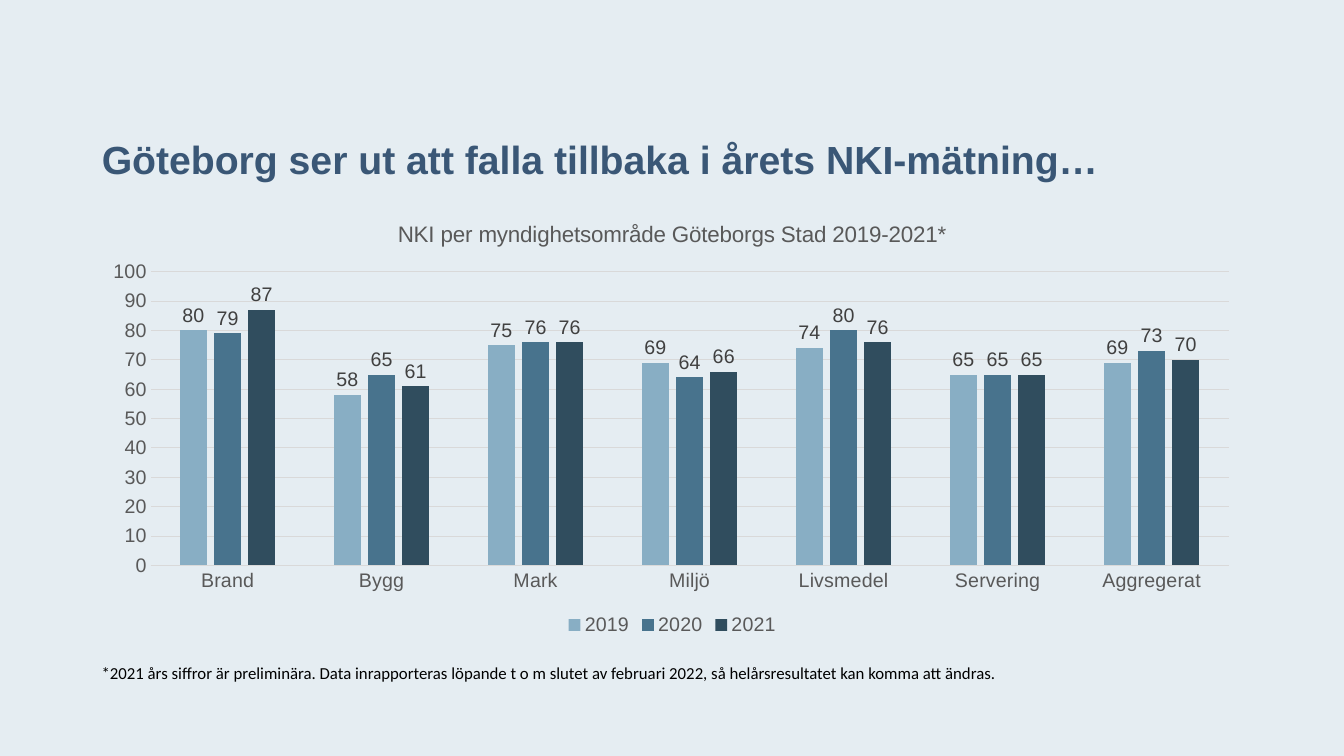
from dataclasses import dataclass

import pptx
import pptx.chart.data
import pptx.dml.color
import pptx.enum.chart
import pptx.enum.text
import pptx.oxml
import pptx.oxml.ns
import pptx.util
from pptx.util import Pt


@dataclass(frozen=True)
class Theme:
    background: str = "E5EDF2"
    heading: str = "3A5776"
    note: str = "000000"
    chart_text: str = "595959"
    value_text: str = "404040"
    grid: str = "D9D9D9"
    chart_font: str = "Arial"
    note_font: str = "Calibri"
    heading_size: float = 28
    chart_title_size: float = 16
    chart_size: float = 14
    note_size: float = 12


@dataclass(frozen=True)
class Box:
    left: float
    top: float
    width: float
    height: float

    def lengths(self) -> tuple:
        return Pt(self.left), Pt(self.top), Pt(self.width), Pt(self.height)


@dataclass(frozen=True)
class YearSeries:
    year: str
    scores: tuple
    color: str


THEME = Theme()
TITLE_BOX = Box(65.5, 29.5, 828, 104.5)
CHART_BOX = Box(66.25, 144, 828, 313.2)
NOTE_BOX = Box(65.5, 470, 681, 21.8)
PLOT_LAYOUT = {"x": 0.05, "y": 0.16, "w": 0.93, "h": 0.67}

AREAS = ("Brand", "Bygg", "Mark", "Miljö", "Livsmedel", "Servering", "Aggregerat")
YEARS = (
    YearSeries("2019", (80, 58, 75, 69, 74, 65, 69), "88AEC4"),
    YearSeries("2020", (79, 65, 76, 64, 80, 65, 73), "48738D"),
    YearSeries("2021", (87, 61, 76, 66, 76, 65, 70), "304D5E"),
)


def rgb(color: str) -> pptx.dml.color.RGBColor:
    return pptx.dml.color.RGBColor.from_string(color)


def format_font(font, size: float, color: str, name: str = THEME.chart_font,
                bold: bool = False) -> None:
    font.size = Pt(size)
    font.name = name
    font.bold = bold
    font.color.rgb = rgb(color)


def write_text(frame, text: str, *, size: float, color: str, name: str = THEME.chart_font,
               bold: bool = False, line_spacing: float | None = None) -> None:
    paragraph = frame.paragraphs[0]
    run = paragraph.add_run()
    run.text = text
    format_font(run.font, size, color, name, bold)
    if line_spacing is not None:
        paragraph.line_spacing = Pt(line_spacing)


def add_title(slide) -> None:
    title = slide.shapes.title
    title.left, title.top, title.width, title.height = TITLE_BOX.lengths()
    frame = title.text_frame
    frame.word_wrap = True
    frame.auto_size = pptx.enum.text.MSO_AUTO_SIZE.NONE
    frame.vertical_anchor = pptx.enum.text.MSO_ANCHOR.BOTTOM
    write_text(frame, "Göteborg ser ut att falla tillbaka i årets NKI-mätning…",
               size=THEME.heading_size, color=THEME.heading, bold=True, line_spacing=31)
    frame.paragraphs[0].alignment = pptx.enum.text.PP_ALIGN.LEFT


def set_plot_layout(chart) -> None:
    plot_area = chart.element.chart.plotArea
    for layout in plot_area.findall(pptx.oxml.ns.qn("c:layout")):
        plot_area.remove(layout)
    modes = "".join(f'<c:{key}Mode val="edge"/>' for key in "xy")
    sizes = "".join(f'<c:{key} val="{value}"/>' for key, value in PLOT_LAYOUT.items())
    plot_area.insert(0, pptx.oxml.parse_xml(
        f'<c:layout {pptx.oxml.ns.nsdecls("c")}><c:manualLayout>'
        f'<c:layoutTarget val="inner"/>{modes}{sizes}</c:manualLayout></c:layout>'))


def style_line(line) -> None:
    line.color.rgb = rgb(THEME.grid)
    line.width = Pt(0.75)


def format_axes(chart) -> None:
    for axis in (chart.category_axis, chart.value_axis):
        axis.major_tick_mark = pptx.enum.chart.XL_TICK_MARK.NONE
        axis.minor_tick_mark = pptx.enum.chart.XL_TICK_MARK.NONE
        format_font(axis.tick_labels.font, THEME.chart_size, THEME.chart_text)
    style_line(chart.category_axis.format.line)
    value_axis = chart.value_axis
    value_axis.minimum_scale, value_axis.maximum_scale = 0, 100
    value_axis.major_unit = 10
    value_axis.format.line.fill.background()
    value_axis.has_major_gridlines = True
    style_line(value_axis.major_gridlines.format.line)


def format_series(series, color: str) -> None:
    series.format.fill.solid()
    series.format.fill.fore_color.rgb = rgb(color)
    series.invert_if_negative = False
    labels = series.data_labels
    labels.show_value = True
    labels.position = pptx.enum.chart.XL_LABEL_POSITION.OUTSIDE_END
    format_font(labels.font, THEME.chart_size, THEME.value_text)


def add_score_chart(slide) -> None:
    data = pptx.chart.data.CategoryChartData()
    data.categories = AREAS
    for entry in YEARS:
        data.add_series(entry.year, entry.scores)
    chart = slide.shapes.add_chart(
        pptx.enum.chart.XL_CHART_TYPE.COLUMN_CLUSTERED, *CHART_BOX.lengths(), data).chart
    format_font(chart.font, THEME.chart_size, THEME.chart_text)

    # Title and legend
    chart.has_title = True
    chart.chart_title.include_in_layout = False
    write_text(chart.chart_title.text_frame, "NKI per myndighetsområde Göteborgs Stad 2019-2021*",
               size=THEME.chart_title_size, color=THEME.chart_text)
    chart.has_legend = True
    chart.legend.position = pptx.enum.chart.XL_LEGEND_POSITION.BOTTOM
    chart.legend.include_in_layout = False
    format_font(chart.legend.font, THEME.chart_size, THEME.chart_text)

    # Axes and columns
    format_axes(chart)
    plot = chart.plots[0]
    plot.gap_width = 219
    plot.overlap = -27
    plot.vary_by_categories = False
    for series, entry in zip(plot.series, YEARS):
        format_series(series, entry.color)
    set_plot_layout(chart)


def add_note(slide) -> None:
    frame = slide.shapes.add_textbox(*NOTE_BOX.lengths()).text_frame
    frame.word_wrap = True
    frame.auto_size = pptx.enum.text.MSO_AUTO_SIZE.SHAPE_TO_FIT_TEXT
    write_text(frame, "*2021 års siffror är preliminära. Data inrapporteras löpande t o m slutet "
               "av februari 2022, så helårsresultatet kan komma att ändras.",
               size=THEME.note_size, color=THEME.note, name=THEME.note_font)


def main() -> None:
    presentation = pptx.Presentation()
    presentation.slide_width, presentation.slide_height = Pt(960), Pt(540)
    slide = presentation.slides.add_slide(presentation.slide_layouts.get_by_name("Title Only"))
    slide.background.fill.solid()
    slide.background.fill.fore_color.rgb = rgb(THEME.background)
    add_title(slide)
    add_score_chart(slide)
    add_note(slide)
    presentation.save("out.pptx")


if __name__ == "__main__":
    main()
